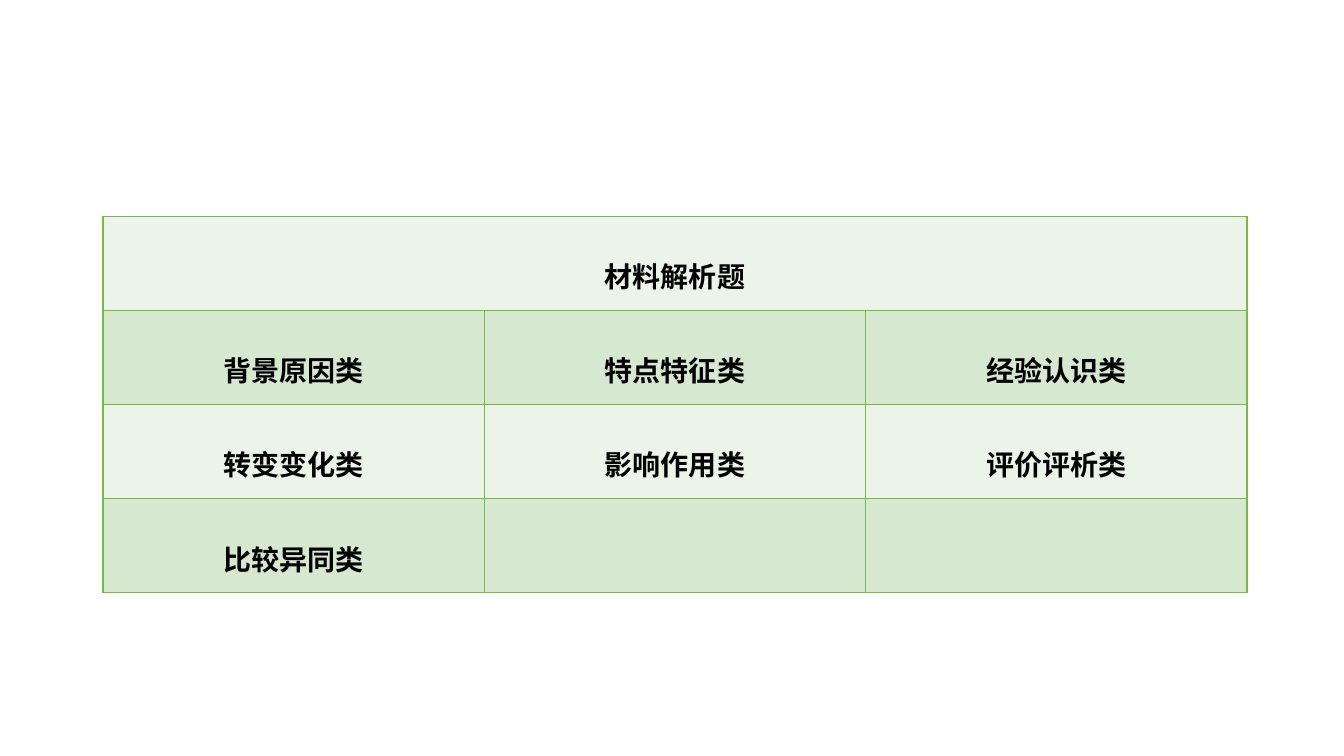
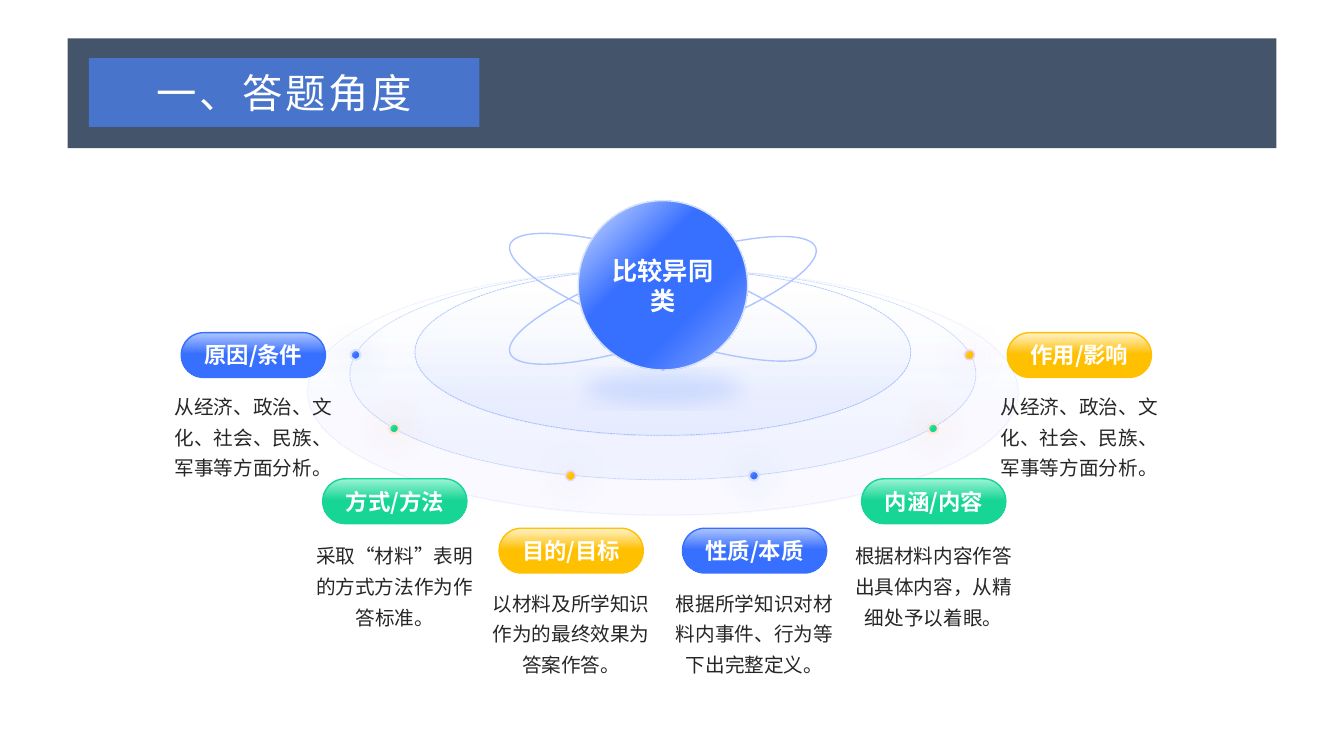
from dataclasses import dataclass

from lxml.etree import SubElement
from pptx import Presentation
from pptx.dml.color import RGBColor
from pptx.enum.dml import MSO_LINE
from pptx.enum.shapes import MSO_SHAPE
from pptx.enum.text import MSO_ANCHOR, MSO_AUTO_SIZE, PP_ALIGN
from pptx.oxml import parse_xml
from pptx.oxml.ns import nsdecls, qn
from pptx.util import Pt


@dataclass(frozen=True)
class Tint:
    """Colours of one pill and its dot."""
    main: str
    pale: str
    mid: str
    rim: str
    glow: str
    rim_width: float
    glow_alpha: int


@dataclass(frozen=True)
class Theme:
    sans: str = "Noto Sans CJK SC"
    latin: str = "Arial"
    white: str = "FFFFFF"
    black: str = "000000"
    ink: str = "262626"
    slate: str = "44546A"
    title_fill: str = "4874CB"
    rule: str = "75BD42"
    bands: tuple = ("ECF4E9", "D6E8CF")
    title: float = 28.8
    cell: float = 20
    hub: float = 18
    pill: float = 16
    body: float = 14
    blue: Tint = Tint("376FFF", "AFC5FF", "87A9FF", "D7E2FF", "376FFF", 1.5, 46)
    green: Tint = Tint("17D594", "9CF4D6", "6BEFC2", "FFE3D4", "FF7429", 1.5, 46)
    gold: Tint = Tint("FFC000", "FFF2CC", "FFD966", "E7D6FF", "8830FE", 1, 30)


T = Theme()
AXIS = 473.5
PILL = (103, 32)
DOT = 7
NOTE = (113.5, 71)

TABLE = [
    ["材料解析题", "", ""],
    ["背景原因类", "特点特征类", "经验认识类"],
    ["转变变化类", "影响作用类", "评价评析类"],
    ["比较异同类", "", ""],
]

# width, height, last gradient stop, opacity
RINGS = [
    (507.6, 175.7, 52, 15, 10),
    (447.1, 150.5, 81, 25, 25),
    (354.2, 118.8, 77, 40, 40),
]

# tops of pill and note, middle of dot
HIGH = (237.6, 277.2, 253.5)
MID = (342, 383.8, 306)
LOW = (377.3, 417.6, 339.8)

# tint, tier, middle of pill, middle of dot, label, note
ANGLES = [
    (T.gold, LOW, 408, 407.5, "目的/目标", "以材料及所学知识作为的最终效果为答案作答。"),
    (T.green, MID, 282, 281.5, "方式/方法", "采取“材料”表明的方式方法作为作答标准。"),
    (T.blue, HIGH, 181, 254, "原因/条件", "从经济、政治、文化、社会、民族、军事等方面分析。"),
    (T.blue, LOW, 539, 538.5, "性质/本质", "根据所学知识对材料内事件、行为等下出完整定义。"),
    (T.green, MID, 667, 666.5, "内涵/内容", "根据材料内容作答出具体内容，从精细处予以着眼。"),
    (T.gold, HIGH, 771, 692.5, "作用/影响", "从经济、政治、文化、社会、民族、军事等方面分析。"),
]


def rgb(code):
    return RGBColor.from_string(code)


def write(frame, text, size, color, bold=False, face=T.sans, lead=1.0, track=0):
    """Put one centred paragraph into a text frame."""
    para = frame.paragraphs[0]
    para.text = text
    para.alignment = PP_ALIGN.CENTER
    para.line_spacing = lead
    font = para.font
    font.size, font.bold, font.name = Pt(size), bold, face
    font.color.rgb = rgb(color)
    props = para._p.pPr.find(qn("a:defRPr"))
    SubElement(props, qn("a:ea")).set("typeface", T.sans)
    if track:
        props.set("spc", str(round(track * 100)))


def pad(frame, side=0, edge=0):
    frame.word_wrap = True
    frame.auto_size = MSO_AUTO_SIZE.NONE
    frame.margin_left = frame.margin_right = Pt(side)
    frame.margin_top = frame.margin_bottom = Pt(edge)


def add(slide, kind, left, top, width, height):
    """Add a plain shape with neither fill, line nor shadow."""
    shape = slide.shapes.add_shape(kind, Pt(left), Pt(top), Pt(width), Pt(height))
    shape.shadow.inherit = False
    shape.fill.background()
    shape.line.fill.background()
    return shape


def blend(shape, stops, angle=None):
    """Fill with (position, colour, opacity) stops, round when no angle is given."""
    marks = "".join(
        f'<a:gs pos="{pos * 1000}"><a:srgbClr val="{color}">'
        f'<a:alpha val="{alpha * 1000}"/></a:srgbClr></a:gs>'
        for pos, color, alpha in stops)
    if angle is None:
        way = '<a:path path="circle"><a:fillToRect l="100000" t="100000"/></a:path>'
    else:
        way = f'<a:lin ang="{angle * 60000}" scaled="0"/>'
    props = shape._element.spPr
    props.replace(props.find(qn("a:noFill")), parse_xml(
        f'<a:gradFill {nsdecls("a")} rotWithShape="1"><a:gsLst>{marks}</a:gsLst>{way}</a:gradFill>'))


def edge(shape, color, width, alpha=100):
    shape.line.color.rgb = rgb(color)
    shape.line.width = Pt(width)
    if alpha < 100:
        tone = shape._element.spPr.find(f'{qn("a:ln")}/{qn("a:solidFill")}/{qn("a:srgbClr")}')
        SubElement(tone, qn("a:alpha")).set("val", str(alpha * 1000))


def shade(shape, color, alpha, blur, **more):
    """Cast an outer shadow; more holds further shadow attributes."""
    effects = shape._element.spPr.find(qn("a:effectLst"))
    cast = SubElement(effects, qn("a:outerShdw"), blurRad=str(Pt(blur)), rotWithShape="0", **more)
    tone = SubElement(cast, qn("a:srgbClr"), val=color)
    SubElement(tone, qn("a:alpha"), val=str(alpha * 1000))


def rule(cell):
    props = cell._tc.get_or_add_tcPr()
    for side in ("lnL", "lnR", "lnT", "lnB"):
        props.append(parse_xml(
            f'<a:{side} {nsdecls("a")} w="{Pt(1)}"><a:solidFill>'
            f'<a:srgbClr val="{T.rule}"/></a:solidFill></a:{side}>'))


def grid(slide, rows, left, top, width, height):
    """Add a banded table whose first row is one merged heading."""
    count = len(rows[0])
    table = slide.shapes.add_table(
        len(rows), count, Pt(left), Pt(top), Pt(width), Pt(height)).table
    for row, texts in enumerate(rows):
        for col, text in enumerate(texts):
            cell = table.cell(row, col)
            rule(cell)
            cell.fill.solid()
            cell.fill.fore_color.rgb = rgb(T.bands[row % 2])
            cell.vertical_anchor = MSO_ANCHOR.MIDDLE
            if text:
                write(cell.text_frame, text, T.cell, T.black, True, T.latin, 1.6)
    table.cell(0, 0).merge(table.cell(0, count - 1))


def head(slide, text):
    """Add the slate band and set the title upon it."""
    band = add(slide, MSO_SHAPE.RECTANGLE, 48.4, 27.4, 863.3, 78.5)
    band.fill.solid()
    band.fill.fore_color.rgb = rgb(T.slate)
    title = slide.shapes.title
    title._element.addprevious(band._element)
    title.left, title.top, title.width, title.height = Pt(63.4), Pt(41.5), Pt(279), Pt(49.2)
    title.fill.solid()
    title.fill.fore_color.rgb = rgb(T.title_fill)
    frame = title.text_frame
    pad(frame, 6.5, 3)
    frame.vertical_anchor = MSO_ANCHOR.MIDDLE
    write(frame, text, T.title, T.white, track=1.9)


def ring(slide, width, height, stop, alpha, line):
    disc = add(slide, MSO_SHAPE.OVAL, AXIS - width / 2, 192.2, width, height)
    blend(disc, [(0, T.white, 0), (stop, T.blue.rim, alpha)], 90)
    edge(disc, T.blue.main, 0.5, line)
    disc.line.dash_style = MSO_LINE.SQUARE_DOT


def label(shape, text, size):
    frame = shape.text_frame
    pad(frame)
    frame.vertical_anchor = MSO_ANCHOR.MIDDLE
    write(frame, text, size, T.white, True)


def angle(slide, tint, tier, mid, spot, name, text):
    """Add a pill, its dot on the ring and the note below."""
    top, below, level = tier
    pill = add(slide, MSO_SHAPE.ROUNDED_RECTANGLE, mid - PILL[0] / 2, top, *PILL)
    pill.adjustments[0] = 0.5
    blend(pill, [(0, tint.pale, 100), (48, tint.main, 100)], 90)
    edge(pill, tint.main, 1)
    label(pill, name, T.pill)

    dot = add(slide, MSO_SHAPE.OVAL, spot - DOT / 2, level - DOT / 2, DOT, DOT)
    blend(dot, [(4, tint.mid, 100), (54, tint.main, 100)], 45)
    edge(dot, tint.rim, tint.rim_width)
    shade(dot, tint.glow, tint.glow_alpha, 28)

    note = slide.shapes.add_textbox(
        Pt(mid - NOTE[0] / 2), Pt(below), Pt(NOTE[0]), Pt(NOTE[1]))
    pad(note.text_frame)
    write(note.text_frame, text, T.body, T.ink, lead=1.3)


def hub(slide, text):
    """Add the two orbits and the ball in front of them."""
    for top, turn in ((185, 19), (187.2, -19)):
        orbit = add(slide, MSO_SHAPE.OVAL, AXIS - 115.5, top, 231, 54.7)
        orbit.rotation = turn
        edge(orbit, T.blue.pale, 1)
    size = 121
    ball = add(slide, MSO_SHAPE.OVAL, AXIS - size / 2, 143.3, size, size)
    tint = T.blue
    blend(ball, [(0, tint.mid, 100), (34, tint.main, 100),
                 (62, tint.main, 100), (100, tint.rim, 100)])
    edge(ball, tint.rim, 1)
    shade(ball, tint.glow, 15, 14, dist=str(Pt(25)), dir="5400000",
          sx="90000", sy="20000", algn="b")
    label(ball, text, T.hub)


def main():
    deck = Presentation()
    deck.slide_width, deck.slide_height = Pt(960), Pt(540)

    kinds = deck.slides.add_slide(deck.slide_layouts[6])
    grid(kinds, TABLE, 73.6, 154.4, 817.2, 269)

    views = deck.slides.add_slide(deck.slide_layouts[5])
    head(views, "一、答题角度")
    for item in RINGS:
        ring(views, *item)
    for item in ANGLES:
        angle(views, *item)
    hub(views, "比较异同类")

    deck.save("out.pptx")


if __name__ == "__main__":
    main()
